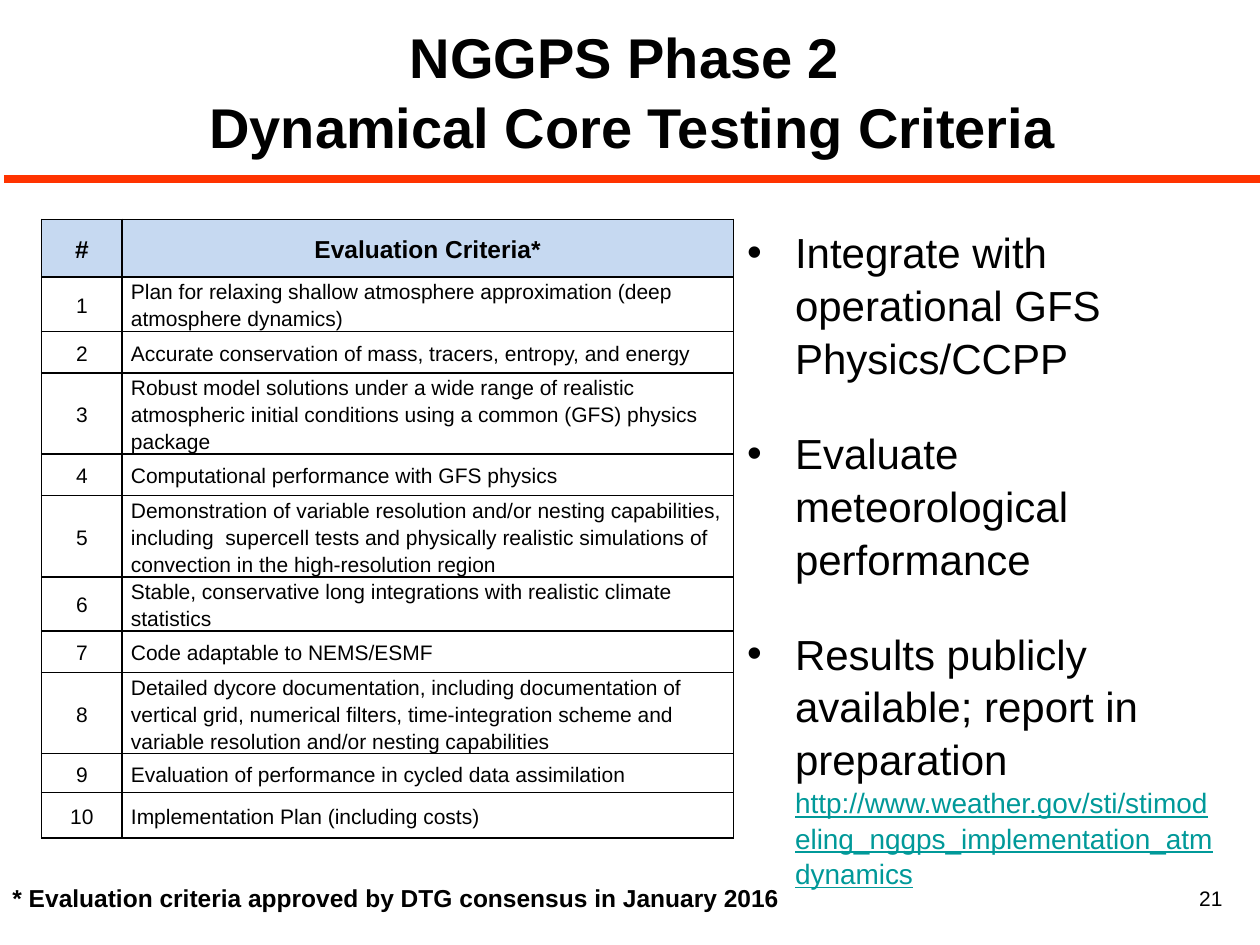
import dataclasses
import typing

import lxml.etree
import pptx
import pptx.dml.color
import pptx.enum.shapes
import pptx.enum.text
import pptx.oxml.ns
import pptx.util

SCALE = 9144  # EMU in one px, at 100 px to the inch
FACE = "Arial"
BLACK, RED, TEAL, SKY = "000000", "FF3300", "009999", "C6D9F1"
ALIGN = pptx.enum.text.PP_ALIGN
ANCHOR = pptx.enum.text.MSO_ANCHOR


@dataclasses.dataclass
class Box:
    left: int
    top: int
    width: int
    height: int

    def emu(self) -> list[int]:
        return [px(n) for n in dataclasses.astuple(self)]


@dataclasses.dataclass
class Run:
    text: str
    size: int
    bold: bool = False
    hue: str = BLACK
    line: bool = False


class Row(typing.NamedTuple):
    height: int
    text: str


ROWS = [
    Row(38, "Plan for relaxing shallow atmosphere approximation (deep atmosphere dynamics)"),
    Row(33, "Accurate conservation of mass, tracers, entropy, and energy"),
    Row(58, "Robust model solutions under a wide range of realistic atmospheric "
            "initial conditions using a common (GFS) physics package"),
    Row(33, "Computational performance with GFS physics"),
    Row(58, "Demonstration of variable resolution and/or nesting capabilities, including  "
            "supercell tests and physically realistic simulations of convection "
            "in the high-resolution region"),
    Row(33, "Stable, conservative long integrations with realistic climate statistics"),
    Row(33, "Code adaptable to NEMS/ESMF"),
    Row(58, "Detailed dycore documentation, including documentation of vertical grid, "
            "numerical filters, time-integration scheme and variable resolution "
            "and/or nesting capabilities"),
    Row(31, "Evaluation of performance in cycled data assimilation"),
    Row(36, "Implementation Plan (including costs)"),
]

POINTS = [
    [Run("Integrate with operational GFS Physics/CCPP", 24)],
    [Run("Evaluate meteorological performance", 24)],
    [Run("Results publicly available; report in preparation ", 24),
     Run("http://www.weather.gov/sti/stimodeling_nggps_implementation_atmdynamics",
         16, hue=TEAL, line=True)],
]


def px(count: int) -> int:
    return pptx.util.Emu(count * SCALE)


def shade(code: str) -> pptx.dml.color.RGBColor:
    return pptx.dml.color.RGBColor.from_string(code)


def node(parent, tag: str, **attrs: str):
    return lxml.etree.SubElement(parent, pptx.oxml.ns.qn(tag), **attrs)


def write(para, run: Run) -> None:
    part = para.add_run()
    part.text = run.text
    font = part.font
    font.name, font.size, font.bold = FACE, pptx.util.Pt(run.size), run.bold
    font.color.rgb = shade(run.hue)
    if run.line:
        font.underline = True


def place(shape, box: Box):
    """Move a text shape and give back its frame, set to wrap."""
    shape.left, shape.top, shape.width, shape.height = box.emu()
    frame = shape.text_frame
    frame.word_wrap = True
    frame.auto_size = pptx.enum.text.MSO_AUTO_SIZE.NONE
    return frame


def label(slide, box: Box, run: Run, align) -> None:
    frame = place(slide.shapes.add_textbox(*box.emu()), box)
    frame.paragraphs[0].alignment = align
    write(frame.paragraphs[0], run)


def draw_cell(cell, run: Run, align, fill: str | None) -> None:
    props = cell._tc.get_or_add_tcPr()
    for side in "LRTB":
        edge = node(props, f"a:ln{side}", w=str(pptx.util.Pt(1)))
        node(node(edge, "a:solidFill"), "a:srgbClr", val=BLACK)
    if fill:
        cell.fill.solid()
        cell.fill.fore_color.rgb = shade(fill)
    else:
        cell.fill.background()
    cell.margin_left = cell.margin_right = px(7)
    cell.margin_top = cell.margin_bottom = 0
    cell.vertical_anchor = ANCHOR.MIDDLE
    para = cell.text_frame.paragraphs[0]
    para.alignment, para.line_spacing = align, 1.15
    write(para, run)


def draw_table(slide, box: Box) -> None:
    rows = [Row(46, "Evaluation Criteria*"), *ROWS]
    grid = slide.shapes.add_table(len(rows), 2, *box.emu()).table
    grid.horz_banding = grid.first_row = False
    for col, width in zip(grid.columns, (64, 485)):
        col.width = px(width)
    for num, row in enumerate(rows):
        grid.rows[num].height = px(row.height)
        head = num == 0
        size, fill = (14, SKY) if head else (12, None)
        draw_cell(grid.cell(num, 0), Run(str(num or "#"), size, head), ALIGN.CENTER, fill)
        draw_cell(grid.cell(num, 1), Run(row.text, size, head),
                  ALIGN.CENTER if head else ALIGN.LEFT, fill)


def draw_title(slide) -> None:
    frame = place(slide.shapes.title, Box(91, 17, 822, 108))
    frame.vertical_anchor = ANCHOR.MIDDLE
    para = frame.paragraphs[0]
    para.alignment, para.line_spacing = ALIGN.CENTER, 1.05
    write(para, Run("NGGPS Phase 2 ", 32, True))
    para.add_line_break()
    write(para, Run("Dynamical Core Testing Criteria", 32, True))


def draw_list(slide) -> None:
    frame = place(slide.placeholders[1], Box(583, 173, 392, 567))
    frame.vertical_anchor = ANCHOR.TOP
    for num, runs in enumerate(POINTS):
        para = frame.add_paragraph() if num else frame.paragraphs[0]
        para.alignment, para.line_spacing = ALIGN.LEFT, 1.05
        para.space_before = pptx.util.Pt(24 if num else 0)
        props = para._p.get_or_add_pPr()
        props.set("marL", str(px(38)))
        props.set("indent", str(-px(38)))
        node(props, "a:buFont", typeface=FACE)
        node(props, "a:buChar", char="•")
        for run in runs:
            write(para, run)


def draw_rule(slide) -> None:
    kind = pptx.enum.shapes.MSO_CONNECTOR.STRAIGHT
    rule = slide.shapes.add_connector(kind, px(3), px(142), px(1000), px(142))
    rule.line.color.rgb = shade(RED)
    rule.line.width = pptx.util.Pt(4.5)
    node(rule._element.spPr, "a:effectLst")


def main() -> None:
    deck = pptx.Presentation()
    deck.slide_width, deck.slide_height = px(1000), px(750)
    slide = deck.slides.add_slide(deck.slide_layouts[1])
    # Page number and rule
    label(slide, Box(926, 698, 70, 52), Run("21", 12), ALIGN.CENTER)
    draw_rule(slide)
    # Criteria table and its footnote
    draw_table(slide, Box(33, 174, 549, 512))
    label(slide, Box(0, 696, 742, 34),
          Run("* Evaluation criteria approved by DTG consensus in January 2016", 14, True),
          ALIGN.LEFT)
    # Title and bullet list
    draw_title(slide)
    draw_list(slide)
    deck.save("out.pptx")


if __name__ == "__main__":
    main()
